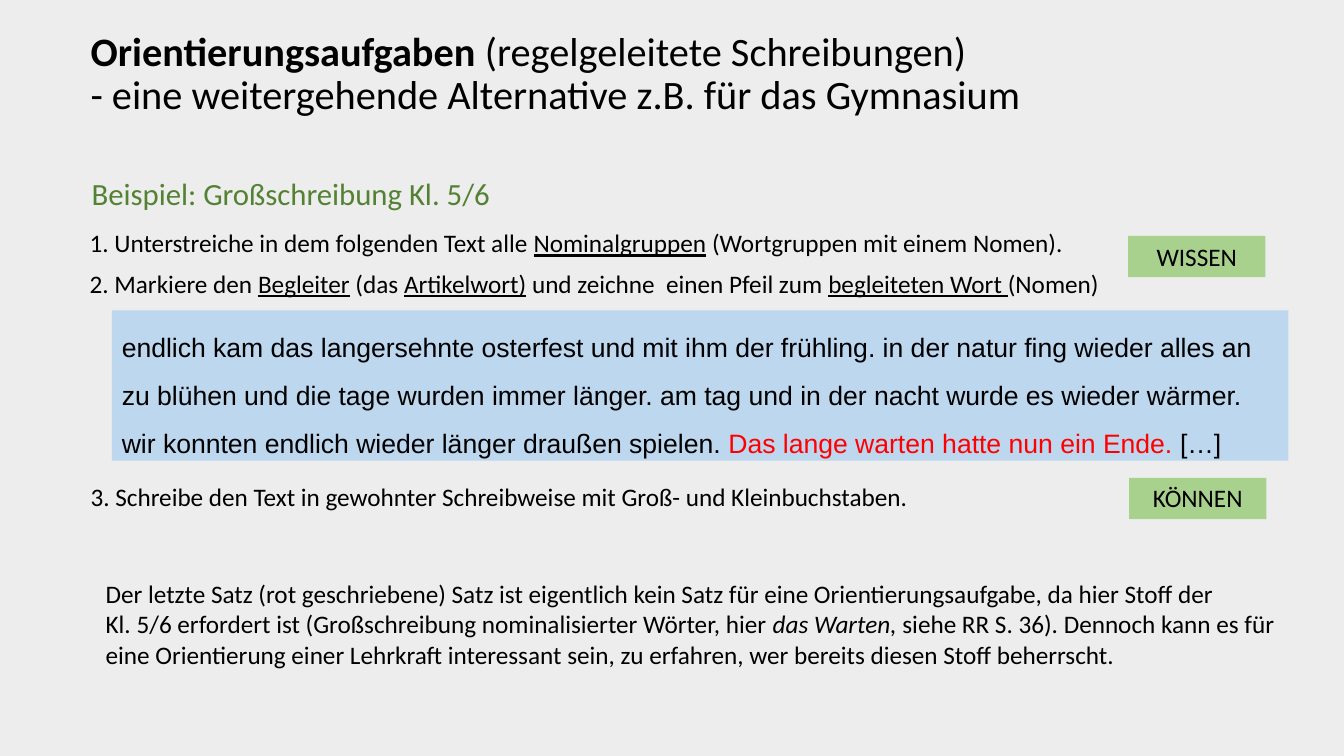
from pptx import Presentation
from pptx import util as u
from pptx.dml.color import RGBColor
from pptx.enum import shapes, text

COLORS = {
    "back": "EDEDED",
    "ink": "000000",
    "green": "548235",
    "red": "FF0000",
    "blue": "BDD7EE",
    "tag": "A9D18E",
}


def color(name):
    return RGBColor.from_string(COLORS[name])


def write(shape, paras, size=18, font="Calibri", ink="ink", line=None,
          before=None, after=None, align=text.PP_ALIGN.LEFT,
          anchor=text.MSO_ANCHOR.TOP):
    """Each paragraph is a list of (words, style); style is b, i, u, red or empty."""
    frame = shape.text_frame
    frame.word_wrap = True
    frame.vertical_anchor = anchor
    for num, parts in enumerate(paras):
        para = frame.add_paragraph() if num else frame.paragraphs[0]
        para.alignment = align
        if line:
            para.line_spacing = line
        if before is not None:
            para.space_before = u.Pt(before)
        if after is not None:
            para.space_after = u.Pt(after)
        for words, style in parts:
            for row, piece in enumerate(words.split("\n")):
                if row:
                    para.add_line_break()
                run = para.add_run()
                run.text = piece
                face = run.font
                face.size, face.name = u.Pt(size), font
                face.bold = style == "b"
                face.italic = style == "i"
                face.underline = style == "u"
                face.color.rgb = color("red" if style == "red" else ink)


def label(slide, box, paras, **form):
    shape = slide.shapes.add_textbox(*map(u.Inches, box))
    write(shape, paras, **form)


def panel(slide, box, fill, paras, **form):
    shape = slide.shapes.add_shape(
        shapes.MSO_SHAPE.RECTANGLE, *map(u.Inches, box))
    shape.shadow.inherit = False
    shape.fill.solid()
    shape.fill.fore_color.rgb = color(fill)
    shape.line.fill.background()
    write(shape, paras, **form)


def main():
    deck = Presentation()
    deck.slide_width, deck.slide_height = u.Inches(13.33), u.Inches(7.5)
    slide = deck.slides.add_slide(deck.slide_layouts[6])
    slide.background.fill.solid()
    slide.background.fill.fore_color.rgb = color("back")

    # Title and subtitle
    label(slide, (0.8, 0.35, 11.5, 0.79), [[
        ("Orientierungsaufgaben", "b"),
        (" (regelgeleitete Schreibungen)\n"
         "- eine weitergehende Alternative z.B. für das Gymnasium", ""),
    ]], size=28.8, line=0.9, anchor=text.MSO_ANCHOR.MIDDLE)
    label(slide, (0.81, 1.68, 10.39, 0.47),
          [[("Beispiel: Großschreibung Kl. 5/6", "")]], size=22, ink="green")

    # Tasks 1 and 2
    label(slide, (0.79, 2.15, 10.39, 0.79), [
        [("1. Unterstreiche in dem folgenden Text alle ", ""),
         ("Nominalgruppen", "u"),
         (" (Wortgruppen mit einem Nomen).", "")],
        [("2. Markiere den ", ""),
         ("Begleiter", "u"),
         (" (das ", ""),
         ("Artikelwort)", "u"),
         (" und zeichne  einen Pfeil zum ", ""),
         ("begleiteten Wort ", "u"),
         ("(Nomen)", "")],
    ], line=1.2, before=3)

    # Practice text
    panel(slide, (1.11, 3.08, 11.67, 1.49), "blue", [[
        ("endlich kam das langersehnte osterfest und mit ihm der frühling. "
         "in der natur fing wieder alles an zu blühen und die tage wurden "
         "immer länger. am tag und in der nacht wurde es wieder wärmer. "
         "wir konnten endlich wieder länger draußen spielen. ", ""),
        ("Das lange warten hatte nun ein Ende. ", "red"),
        ("[…]", ""),
    ]], size=19, font="Arial", line=1.5, after=8)

    # Task 3
    label(slide, (0.8, 4.73, 12.07, 0.4), [[
        ("3. Schreibe den Text in gewohnter Schreibweise mit "
         "Groß- und Kleinbuchstaben.", "")]])

    # Tags beside the tasks
    for word, left, top in (("WISSEN", 11.19, 2.34), ("KÖNNEN", 11.2, 4.74)):
        panel(slide, (left, top, 1.36, 0.41), "tag", [[(word, "")]],
              align=text.PP_ALIGN.CENTER)

    # Closing remark
    label(slide, (0.95, 5.69, 11.83, 1.01), [[
        ("Der letzte Satz (rot geschriebene) Satz ist eigentlich kein Satz "
         "für eine Orientierungsaufgabe, da hier Stoff der \n"
         "Kl. 5/6 erfordert ist (Großschreibung nominalisierter Wörter, hier ", ""),
        ("das Warten, ", "i"),
        ("siehe RR S. 36). Dennoch kann es für eine Orientierung einer "
         "Lehrkraft interessant sein, zu erfahren, wer bereits diesen Stoff "
         "beherrscht.", ""),
    ]])

    deck.save("out.pptx")


if __name__ == "__main__":
    main()
